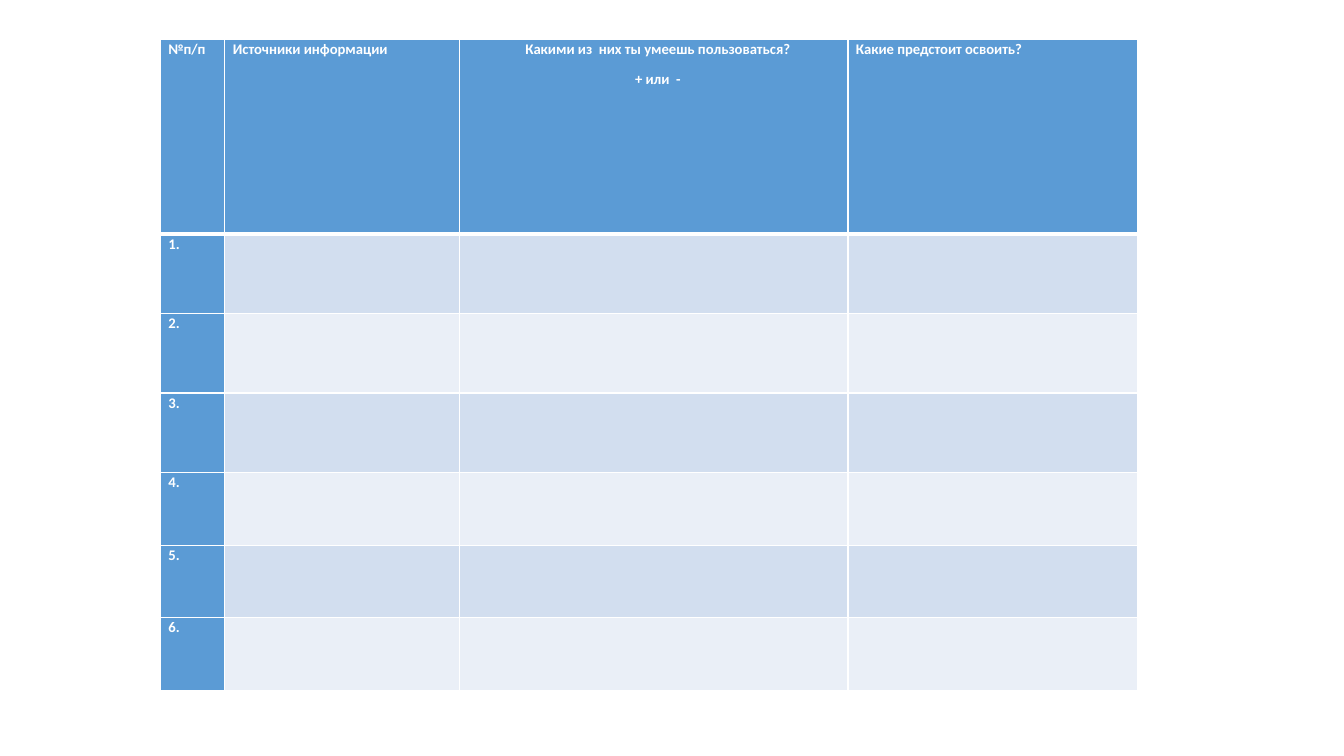
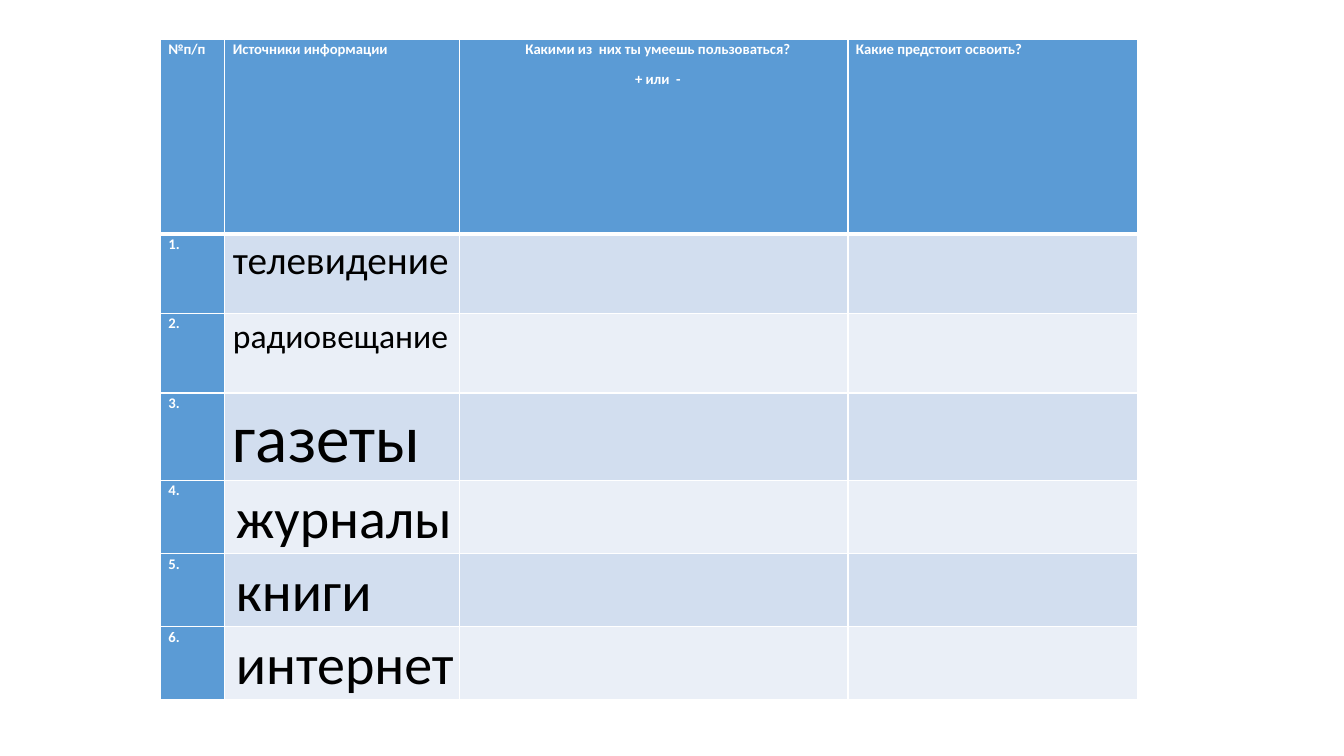
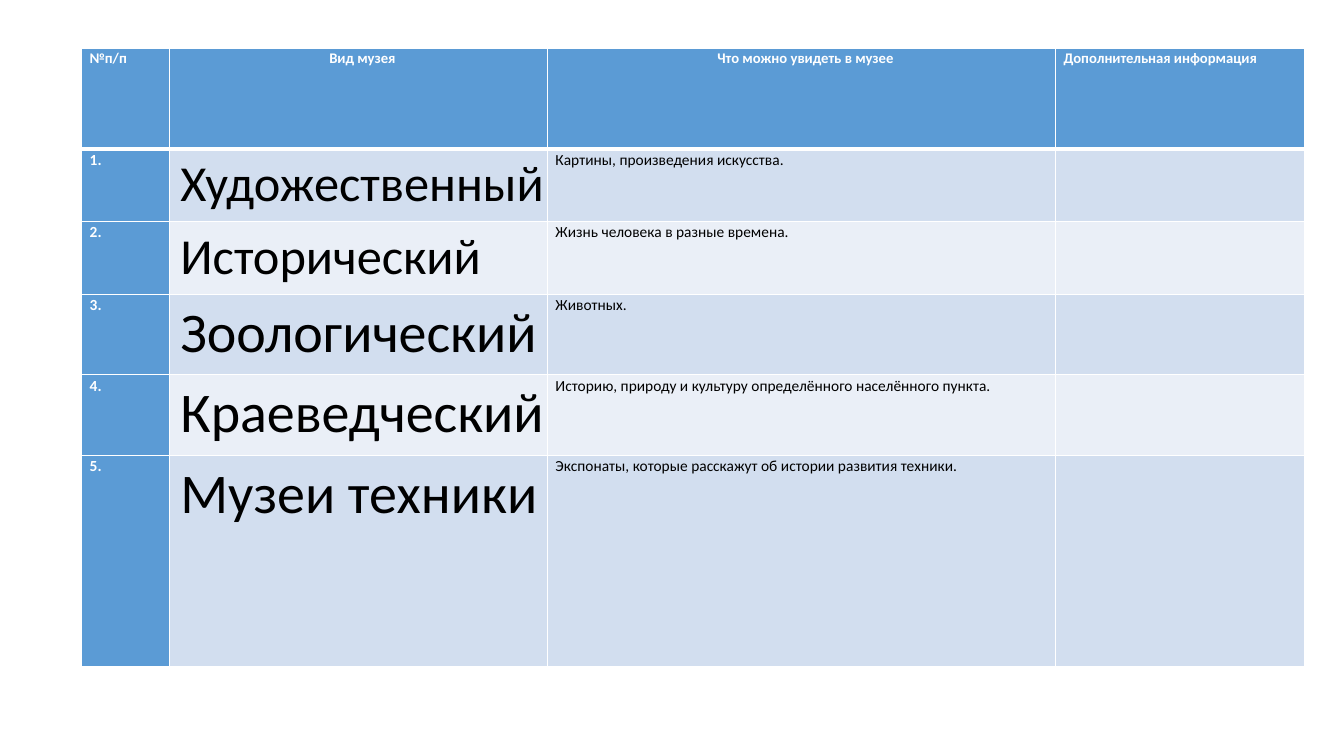
from dataclasses import dataclass

from lxml import etree
from pptx import Presentation
from pptx.dml.color import RGBColor
from pptx.enum import text
from pptx.oxml import ns
from pptx.util import Inches, Pt


@dataclass(frozen=True)
class Theme:
    font: str = "Calibri"
    accent: str = "5B9BD5"
    bands: tuple = ("D2DEEF", "EAEFF7")
    light: str = "FFFFFF"
    dark: str = "000000"
    label_size: float = 10.5
    note_size: float = 11
    line_spacing: float = 1.07
    space_after: float = 7.5
    inset: float = 0.08
    indent: float = 0.11
    rule: float = 1
    header_rule: float = 3


@dataclass(frozen=True)
class Entry:
    """Text of one cell with its look."""
    text: str
    size: float = 10.5
    heading: bool = False
    centred: bool = False
    indented: bool = False
    spaced: bool = True


THEME = Theme()


def label(words, size=THEME.label_size, **look):
    return Entry(words, size, heading=True, **look)


def name(words, size):
    return Entry(words, size, indented=True)


def plain(words, size=THEME.note_size):
    return Entry(words, size, spaced=False)


def set_borders(cell, top, bottom):
    """Draw the four cell edges; top and bottom are line widths in points."""
    tc_pr = cell._tc.get_or_add_tcPr()
    widths = {"L": THEME.rule, "R": THEME.rule, "T": top, "B": bottom}
    for i, (side, width) in enumerate(widths.items()):
        ln = etree.Element(ns.qn(f"a:ln{side}"), w=str(Pt(width)))
        fill = etree.SubElement(ln, ns.qn("a:solidFill"))
        etree.SubElement(fill, ns.qn("a:srgbClr"), val=THEME.light)
        tc_pr.insert(i, ln)


def write_entry(cell, entry):
    cell.margin_left = Inches(THEME.indent if entry.indented else THEME.inset)
    cell.margin_right = cell.margin_top = cell.margin_bottom = 0
    tf = cell.text_frame
    tf.text = entry.text
    for p in tf.paragraphs:
        p.line_spacing = THEME.line_spacing
        p.space_after = Pt(THEME.space_after if entry.spaced else 0)
        if entry.centred:
            p.alignment = text.PP_ALIGN.CENTER
        for r in p.runs:
            r.font.name = THEME.font
            r.font.size = Pt(entry.size)
            r.font.bold = entry.heading
            r.font.color.rgb = RGBColor.from_string(
                THEME.light if entry.heading else THEME.dark)


def style_cell(cell, row, col):
    is_label = row == 0 or col == 0
    cell.fill.solid()
    cell.fill.fore_color.rgb = RGBColor.from_string(
        THEME.accent if is_label else THEME.bands[(row - 1) % 2])
    set_borders(cell,
                top=THEME.header_rule if row == 1 else THEME.rule,
                bottom=THEME.header_rule if row == 0 else THEME.rule)


def add_table_slide(prs, left, top, widths, heights, header, body):
    """Add a slide with one table; short body rows leave blank cells."""
    s = prs.slides.add_slide(prs.slide_layouts[6])
    table = s.shapes.add_table(
        len(heights), len(widths), Inches(left), Inches(top),
        Inches(sum(widths)), Inches(sum(heights))).table
    table.first_col = True
    for column, width in zip(table.columns, widths):
        column.width = Inches(width)
    for row, height in zip(table.rows, heights):
        row.height = Inches(height)
    for i, entries in enumerate([header, *body]):
        for j in range(len(widths)):
            cell = table.cell(i, j)
            style_cell(cell, i, j)
            if j < len(entries):
                write_entry(cell, entries[j])
    table.cell(0, len(widths) - 1).margin_right = Inches(THEME.inset)


def add_sources_slide(prs, sources):
    header = [label("№п/п"), label("Источники информации"),
              label("Какими из  них ты умеешь пользоваться?\n+ или  -",
                    centred=True),
              label("Какие предстоит освоить?")]
    body = [[label(f"{i}."), *source] for i, source in enumerate(sources, 1)]
    add_table_slide(prs, 1.59, 0.39, [0.64, 2.33, 3.85, 2.87],
                    [1.93] + [0.79] * 3 + [0.72] * 3, header, body)


def add_museums_slide(prs, museums):
    header = [label("№п/п"), label("Вид музея", centred=True),
              label("Что можно увидеть в музее", centred=True),
              label("Дополнительная информация")]
    body = [[label(f"{i}.", THEME.note_size, spaced=False),
             name(kind, size), plain(exhibits)]
            for i, (kind, size, exhibits) in enumerate(museums, 1)]
    add_table_slide(prs, 0.81, 0.48, [0.87, 3.75, 5.04, 2.47],
                    [1, 0.72, 0.72, 0.8, 0.8, 2.09], header, body)


def main():
    prs = Presentation()
    prs.slide_width, prs.slide_height = Inches(13.33), Inches(7.5)
    add_sources_slide(prs, [[]] * 6)
    add_sources_slide(prs, [
        [plain("телевидение", 28)],
        [plain("радиовещание", 24)],
        [plain("газеты", 48)],
        [name("журналы", 40)],
        [name("книги", 40)],
        [name("интернет", 40)],
    ])
    add_museums_slide(prs, [
        ("Художественный", 36, "Картины, произведения искусства."),
        ("Исторический", 36, "Жизнь человека в разные времена."),
        ("Зоологический", 40, "Животных."),
        ("Краеведческий", 40,
         "Историю, природу и культуру определённого населённого пункта."),
        ("Музеи техники", 40,
         "Экспонаты, которые расскажут об истории развития техники."),
    ])
    prs.save("out.pptx")


if __name__ == "__main__":
    main()
